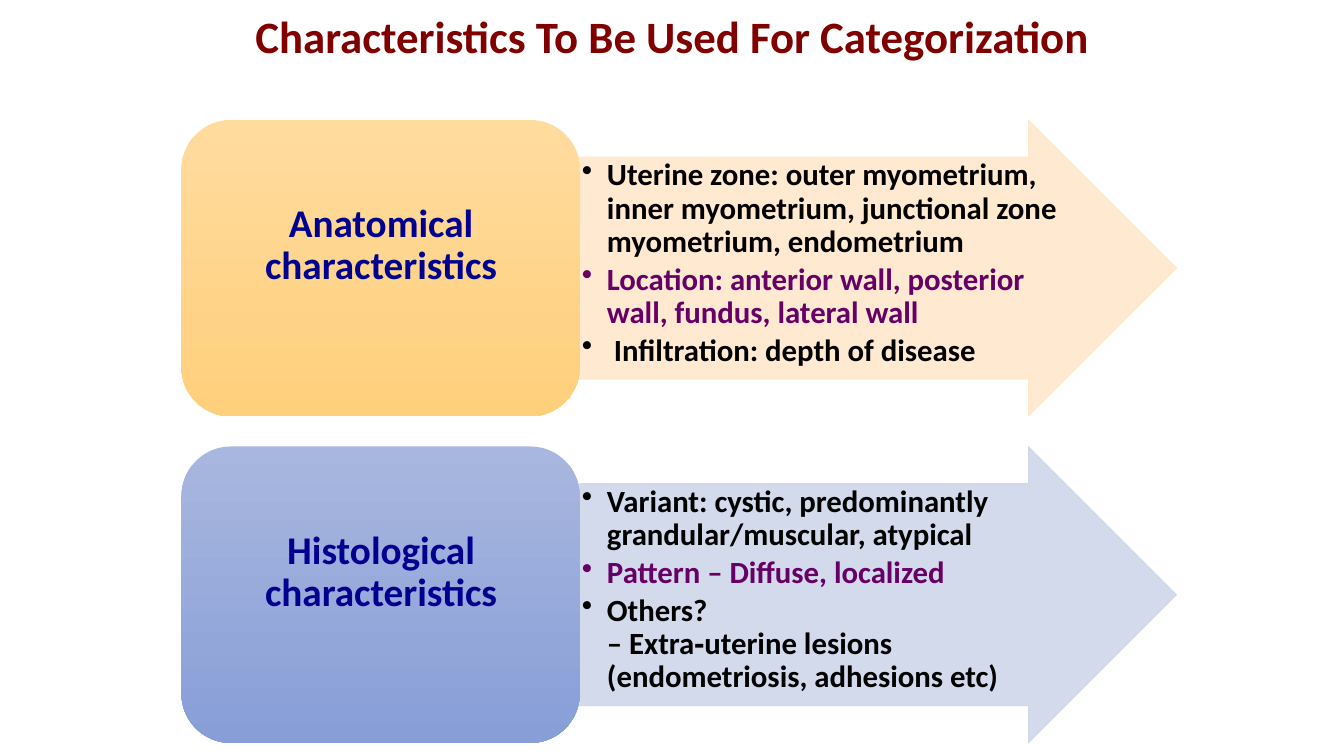
from lxml import etree
from pptx import Presentation
from pptx.dml.color import RGBColor
from pptx.enum.shapes import MSO_SHAPE
from pptx.enum.text import MSO_ANCHOR, PP_ALIGN
from pptx.oxml.ns import qn
from pptx.util import Inches, Pt

ARROW = MSO_SHAPE.RIGHT_ARROW
ROUNDED = MSO_SHAPE.ROUNDED_RECTANGLE
TOP, MIDDLE = MSO_ANCHOR.TOP, MSO_ANCHOR.MIDDLE
CENTER = PP_ALIGN.CENTER

BLACK, PURPLE, NAVY, MAROON = "000000", "660066", "000090", "800000"

# Label, gradient, arrow colour, bullets
ROWS = [
    ("Anatomical characteristics", ("FFDB9E", "FFD07C"), "FFE8CC", [
        "Uterine zone: outer myometrium, inner myometrium, junctional zone "
        "myometrium, endometrium",
        "Location: anterior wall, posterior wall, fundus, lateral wall",
        " Infiltration: depth of disease",
    ]),
    ("Histological characteristics", ("A8B7DF", "889ED7"), "CFD6EA", [
        "Variant: cystic, predominantly grandular/muscular, atypical",
        "Pattern – Diffuse, localized",
        "Others?\v– Extra‐uterine lesions (endometriosis, adhesions etc)",
    ]),
]
ROW_TOP, ROW_PITCH, ROW_HEIGHT = 1.19, 3.24, 2.94


def rgb(color):
    return RGBColor.from_string(color)


class SlideBuilder:
    font = "Calibri"

    def __init__(self, slide):
        self.slide = slide

    def frame(self, sp, anchor, insets):
        tf = sp.text_frame
        tf.word_wrap = True
        tf.vertical_anchor = anchor
        (tf.margin_left, tf.margin_top,
         tf.margin_right, tf.margin_bottom) = map(Inches, insets)
        return tf

    def style(self, p, size, color):
        for r in p.runs:
            r.font.name = self.font
            r.font.size = Pt(size)
            r.font.bold = True
            r.font.color.rgb = rgb(color)

    def title(self, text, box):
        sp = self.slide.shapes.title
        sp.left, sp.top, sp.width, sp.height = map(Inches, box)
        tf = self.frame(sp, TOP, (0.1, 0.09, 0.1, 0.05))
        tf.text = text
        p = tf.paragraphs[0]
        p.alignment = CENTER
        self.style(p, 32, MAROON)

    def shape(self, kind, box):
        sp = self.slide.shapes.add_shape(kind, *map(Inches, box))
        sp.shadow.inherit = False
        return sp

    def arrow(self, box, color):
        sp = self.shape(ARROW, box)
        sp.adjustments[0], sp.adjustments[1] = 0.75, 0.5
        sp.line.width = Pt(0.5)
        for fill in (sp.fill, sp.line.fill):
            fill.solid()
            fill.fore_color.rgb = rgb(color)
        for clr in sp.element.spPr.iter(qn("a:srgbClr")):
            etree.SubElement(clr, qn("a:alpha"), val="90000")

    def card(self, box, colors):
        sp = self.shape(ROUNDED, box)
        sp.line.fill.background()
        sp.fill.gradient()
        sp.fill.gradient_angle = 270
        for position, (stop, color) in enumerate(
                zip(sp.fill.gradient_stops, colors)):
            stop.color.rgb = rgb(color)
            stop.position = position

    def label(self, text, box):
        sp = self.slide.shapes.add_textbox(*map(Inches, box))
        # The deeper bottom inset lifts the label above the card's centre
        tf = self.frame(sp, MIDDLE, (0.12, 0.06, 0.12, 0.5))
        tf.text = text
        p = tf.paragraphs[0]
        p.alignment = CENTER
        p.line_spacing = 0.9
        self.style(p, 28, NAVY)

    def bullets(self, items, box):
        sp = self.slide.shapes.add_textbox(*map(Inches, box))
        tf = self.frame(sp, TOP, (0.02,) * 4)
        for i, item in enumerate(items):
            p = tf.paragraphs[0] if i == 0 else tf.add_paragraph()
            p.text = item
            p.level = 1
            p.line_spacing = 0.9
            p.space_after = Pt(3.3)
            pPr = p._p.get_or_add_pPr()
            pPr.set("marL", str(Inches(0.25)))
            pPr.set("indent", str(Inches(-0.25)))
            etree.SubElement(pPr, qn("a:buChar"), char="•")
            self.style(p, 22, PURPLE if i % 2 else BLACK)


def main():
    prs = Presentation()
    prs.slide_width, prs.slide_height = Inches(13.33), Inches(7.5)
    builder = SlideBuilder(prs.slides.add_slide(prs.slide_layouts[5]))

    # Title
    builder.title("Characteristics To Be Used For Categorization",
                  (1.67, 0, 10, 1.25))

    # One card and one arrow per group of characteristics
    for i, (label, gradient, tint, items) in enumerate(ROWS):
        top = ROW_TOP + i * ROW_PITCH
        builder.arrow((5.75, top, 5.92, ROW_HEIGHT), tint)
        builder.bullets(items, (5.75, top + 0.37, 4.82, 2.21))
        builder.card((1.8, top, 3.95, ROW_HEIGHT), gradient)
        builder.label(label, (1.95, top + 0.14, 3.66, 2.66))

    prs.save("out.pptx")


if __name__ == "__main__":
    main()
